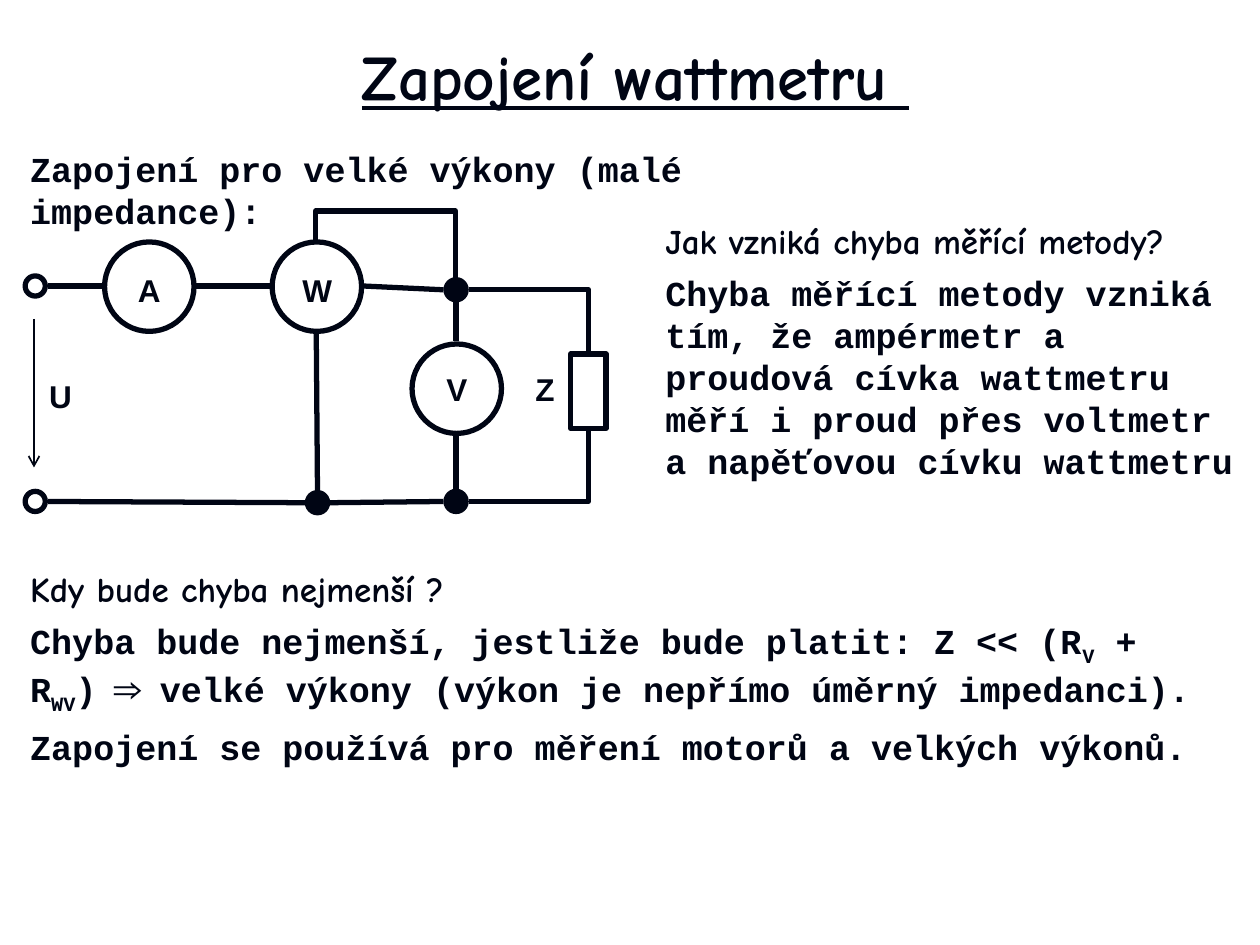
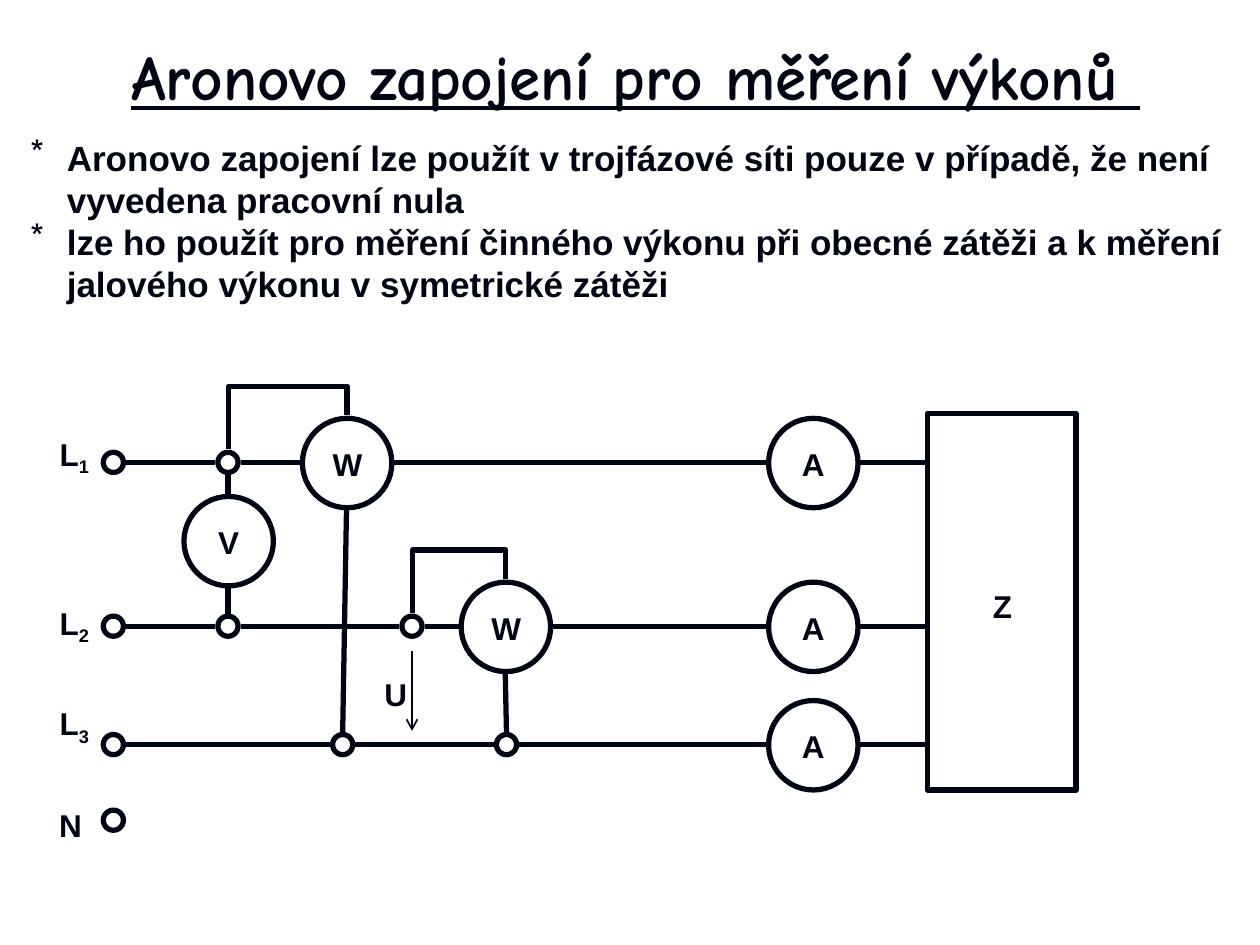
from dataclasses import dataclass

from lxml.etree import SubElement
from pptx import Presentation
from pptx.dml.color import RGBColor
from pptx.enum.shapes import MSO_CONNECTOR, MSO_SHAPE
from pptx.enum.text import MSO_ANCHOR, MSO_AUTO_SIZE, PP_ALIGN
from pptx.oxml.ns import qn
from pptx.shapes.autoshape import Shape
from pptx.shapes.connector import Connector
from pptx.slide import Slide
from pptx.text.text import TextFrame
from pptx.util import Emu, Pt

EMU_PER_PX = 9144
INK = "000514"
HAND = "Comic Neue"
MONO = "Courier New"
SANS = "Arial"
TITLE_ONLY = 5
WIRE_WIDTH = 3
WIRE_GAP = 2
METER = 71
TERMINAL = 16


@dataclass(frozen=True)
class Node:
    x: int
    y: int
    diameter: int = TERMINAL
    filled: bool = False
    letter: str = ""
    label_drop: int = 17

    @property
    def clearance(self) -> int:
        return self.diameter // 2 + WIRE_GAP


@dataclass(frozen=True)
class Label:
    text: str
    left: int
    top: int
    width: int


@dataclass(frozen=True)
class Line:
    text: str
    font: str
    space_before: int = 0
    bullet: bool = False


def px(value: int) -> Emu:
    return Emu(value * EMU_PER_PX)


def colour(value: str) -> RGBColor:
    return RGBColor.from_string(value)


def meter(letter: str, x: int, y: int, label_drop: int = 17) -> Node:
    return Node(x, y, METER, letter=letter, label_drop=label_drop)


def add_title(slide: Slide, text: str) -> None:
    title = slide.shapes.title
    title.left, title.top, title.width, title.height = px(20), px(20), px(969), px(79)
    frame = title.text_frame
    frame.text = text
    frame.auto_size = MSO_AUTO_SIZE.NONE
    frame.vertical_anchor = MSO_ANCHOR.MIDDLE
    paragraph = frame.paragraphs[0]
    paragraph.alignment = PP_ALIGN.CENTER
    font = paragraph.font
    font.name, font.size, font.bold, font.underline = HAND, Pt(36), True, True
    font.color.rgb = colour(INK)


def add_frame(slide: Slide, left: int, top: int, width: int, height: int) -> TextFrame:
    frame = slide.shapes.add_textbox(px(left), px(top), px(width), px(height)).text_frame
    frame.word_wrap = True
    frame.margin_left = frame.margin_right = px(4)
    frame.margin_top = frame.margin_bottom = px(4)
    return frame


def write(frame: TextFrame, line: Line, size: int, first: bool) -> None:
    paragraph = frame.paragraphs[0] if first else frame.add_paragraph()
    paragraph.space_before = Pt(line.space_before)
    font = paragraph.font
    font.name, font.size, font.bold = line.font, Pt(size), True
    font.color.rgb = colour(INK)
    for index, part in enumerate(line.text.split("|")):
        run = paragraph.add_run()
        run.text = part
        if index % 2:
            run._r.get_or_add_rPr().set("baseline", "-25000")
    if line.bullet:
        properties = paragraph._p.get_or_add_pPr()
        properties.set("marL", str(px(29)))
        properties.set("indent", str(px(-29)))
        bullet = properties.makeelement(qn("a:buChar"), {"char": "*"})
        properties.find(qn("a:defRPr")).addprevious(bullet)


def add_text(slide: Slide, left: int, top: int, width: int, height: int, lines: list[Line]) -> None:
    frame = add_frame(slide, left, top, width, height)
    for index, line in enumerate(lines):
        write(frame, line, 20, index == 0)


def add_label(slide: Slide, label: Label) -> None:
    frame = add_frame(slide, label.left, label.top, label.width, 38)
    frame.word_wrap = False
    frame.vertical_anchor = MSO_ANCHOR.MIDDLE
    write(frame, Line(label.text, SANS), 18, True)
    frame.paragraphs[0].alignment = PP_ALIGN.CENTER


def add_outline(slide: Slide, kind: MSO_SHAPE, left: int, top: int, width: int, height: int) -> Shape:
    shape = slide.shapes.add_shape(kind, px(left), px(top), px(width), px(height))
    shape.shadow.inherit = False
    shape.fill.background()
    shape.line.color.rgb = colour(INK)
    shape.line.width = Pt(WIRE_WIDTH)
    return shape


def add_node(slide: Slide, node: Node) -> None:
    radius = node.diameter // 2
    left, top = node.x - radius, node.y - radius
    shape = add_outline(slide, MSO_SHAPE.OVAL, left, top, node.diameter, node.diameter)
    if node.filled:
        shape.fill.solid()
        shape.fill.fore_color.rgb = colour(INK)
    if node.letter:
        add_label(slide, Label(node.letter, left + 20, top + node.label_drop, 31))


def add_line(slide: Slide, x1: int, y1: int, x2: int, y2: int,
             kind: MSO_CONNECTOR = MSO_CONNECTOR.STRAIGHT, width: int = WIRE_WIDTH) -> Connector:
    connector = slide.shapes.add_connector(kind, px(x1), px(y1), px(x2), px(y2))
    connector.line.color.rgb = colour(INK)
    connector.line.width = Pt(width)
    SubElement(connector._element.spPr, qn("a:effectLst"))
    return connector


def add_arrow(slide: Slide, x: int, top: int, bottom: int) -> None:
    arrow = add_line(slide, x, top, x, bottom, width=1)
    SubElement(arrow.line._get_or_add_ln(), qn("a:tailEnd"), type="arrow")


def add_wire(slide: Slide, start: Node, end: Node) -> None:
    across, down = end.x - start.x, end.y - start.y
    if abs(across) > abs(down):
        sign = 1 if across > 0 else -1
        add_line(slide, start.x + sign * start.clearance, start.y,
                 end.x - sign * end.clearance, end.y)
    else:
        sign = 1 if down > 0 else -1
        add_line(slide, start.x, start.y + sign * start.clearance,
                 end.x, end.y - sign * end.clearance)


def add_chain(slide: Slide, *nodes: Node) -> None:
    for start, end in zip(nodes, nodes[1:]):
        add_wire(slide, start, end)


def add_corner(slide: Slide, start: Node, x: int, y: int) -> None:
    corner = add_line(slide, start.x + start.clearance, start.y, x, y, MSO_CONNECTOR.ELBOW)
    corner._element.spPr.find(qn("a:prstGeom")).set("prst", "bentConnector2")


def add_loop(slide: Slide, start: Node, end: Node, peak: int) -> None:
    start_y, end_y = start.y - start.clearance, end.y - end.clearance
    rise, span = start_y - end_y, end.x - start.x
    middle_x, middle_y = (start.x + end.x) // 2, (start_y + end_y) // 2
    left, top = middle_x - rise // 2, middle_y - span // 2
    loop = add_line(slide, left, top, left + rise, top + span, MSO_CONNECTOR.ELBOW)
    properties = loop._element.spPr
    properties.find(qn("a:xfrm")).set("rot", "16200000")
    adjustments = properties.find(qn("a:prstGeom")).find(qn("a:avLst"))
    bend = round((start_y - peak) / rise * 100000)
    SubElement(adjustments, qn("a:gd"), name="adj1", fmla=f"val {bend}")


def build_high_power(slide: Slide) -> None:
    add_title(slide, "Zapojení wattmetru ")
    add_text(slide, 20, 113, 614, 41, [
        Line("Zapojení pro velké výkony (malé impedance):", MONO, 4)])
    add_text(slide, 524, 170, 465, 186, [
        Line("Jak vzniká chyba měřící metody?", HAND, 6),
        Line("Chyba měřící metody vzniká tím, že ampérmetr a proudová cívka wattmetru "
             "měří i proud přes voltmetr a napěťovou cívku wattmetru", MONO, 6)])
    add_text(slide, 20, 446, 953, 161, [
        Line("Kdy bude chyba nejmenší ?", HAND, 6),
        Line("Chyba bude nejmenší, jestliže bude platit: Z << (R|V| + R|WV|) ⇒ velké výkony "
             "(výkon je nepřímo úměrný impedanci).", MONO, 6),
        Line("Zapojení se používá pro měření motorů a velkých výkonů.", MONO, 6)])

    input_top, input_bottom = Node(28, 227), Node(28, 398)
    ammeter = meter("A", 118, 227, 19)
    wattmeter = meter("W", 251, 227, 19)
    voltmeter = meter("V", 362, 308)
    junction_top = Node(362, 230, filled=True)
    junction_bottom = Node(362, 398, filled=True)
    junction_coil = Node(252, 399, filled=True)
    for node in (input_top, input_bottom, ammeter, wattmeter, voltmeter,
                 junction_top, junction_bottom, junction_coil):
        add_node(slide, node)

    add_chain(slide, input_top, ammeter, wattmeter, junction_top, voltmeter,
              junction_bottom, junction_coil, input_bottom)
    add_wire(slide, wattmeter, junction_coil)
    add_loop(slide, wattmeter, junction_top, 167)
    add_outline(slide, MSO_SHAPE.RECTANGLE, 453, 281, 28, 59)
    add_corner(slide, junction_top, 467, 279)
    add_corner(slide, junction_bottom, 467, 342)
    add_arrow(slide, 27, 253, 371)
    add_label(slide, Label("U", 35, 295, 26))
    add_label(slide, Label("Z", 421, 290, 23))


def build_aron(slide: Slide) -> None:
    add_title(slide, "Aronovo zapojení pro měření výkonů ")
    add_text(slide, 20, 104, 965, 141, [
        Line("Aronovo zapojení lze použít v trojfázové síti pouze v případě, "
             "že není vyvedena pracovní nula", SANS, bullet=True),
        Line("lze ho použít pro měření činného výkonu při obecné zátěži "
             "a k měření jalového výkonu v symetrické zátěži", SANS, bullet=True)])

    phase_rows = (367, 497, 591)
    load_left = 736
    phases = [Node(90, y) for y in phase_rows]
    ammeters = [meter("A", 645, y) for y in phase_rows]
    neutral = Node(90, 651)
    voltmeter = meter("V", 181, 429)
    voltage_top, voltage_bottom = Node(181, 367), Node(181, 497)
    wattmeter_1, wattmeter_2 = meter("W", 275, 367), meter("W", 401, 497)
    coil_2_start = Node(327, 497)
    coil_1_end, coil_2_end = Node(272, 591), Node(402, 591)
    for node in (*phases, *ammeters, neutral, voltmeter, voltage_top, voltage_bottom,
                 wattmeter_1, wattmeter_2, coil_2_start, coil_1_end, coil_2_end):
        add_node(slide, node)

    add_chain(slide, phases[0], voltage_top, wattmeter_1, ammeters[0])
    add_chain(slide, phases[1], voltage_bottom, coil_2_start, wattmeter_2, ammeters[1])
    add_chain(slide, phases[2], coil_1_end, coil_2_end, ammeters[2])
    add_chain(slide, voltage_top, voltmeter, voltage_bottom)
    add_wire(slide, wattmeter_1, coil_1_end)
    add_wire(slide, wattmeter_2, coil_2_end)
    add_loop(slide, voltage_top, wattmeter_1, 307)
    add_loop(slide, coil_2_start, wattmeter_2, 437)
    for ammeter in ammeters:
        add_line(slide, ammeter.x + ammeter.clearance, ammeter.y, load_left, ammeter.y)
    add_outline(slide, MSO_SHAPE.RECTANGLE, load_left, 328, 118, 299)
    add_arrow(slide, 327, 517, 580)

    for label in (Label("L|1", 43, 343, 32), Label("L|2", 43, 477, 32),
                  Label("L|3", 43, 557, 32), Label("N", 43, 636, 26),
                  Label("U", 301, 532, 26), Label("Z", 784, 462, 23)):
        add_label(slide, label)


def main() -> None:
    presentation = Presentation()
    presentation.slide_width, presentation.slide_height = px(1000), px(750)
    for build in (build_high_power, build_aron):
        build(presentation.slides.add_slide(presentation.slide_layouts[TITLE_ONLY]))
    presentation.save("out.pptx")


if __name__ == "__main__":
    main()
